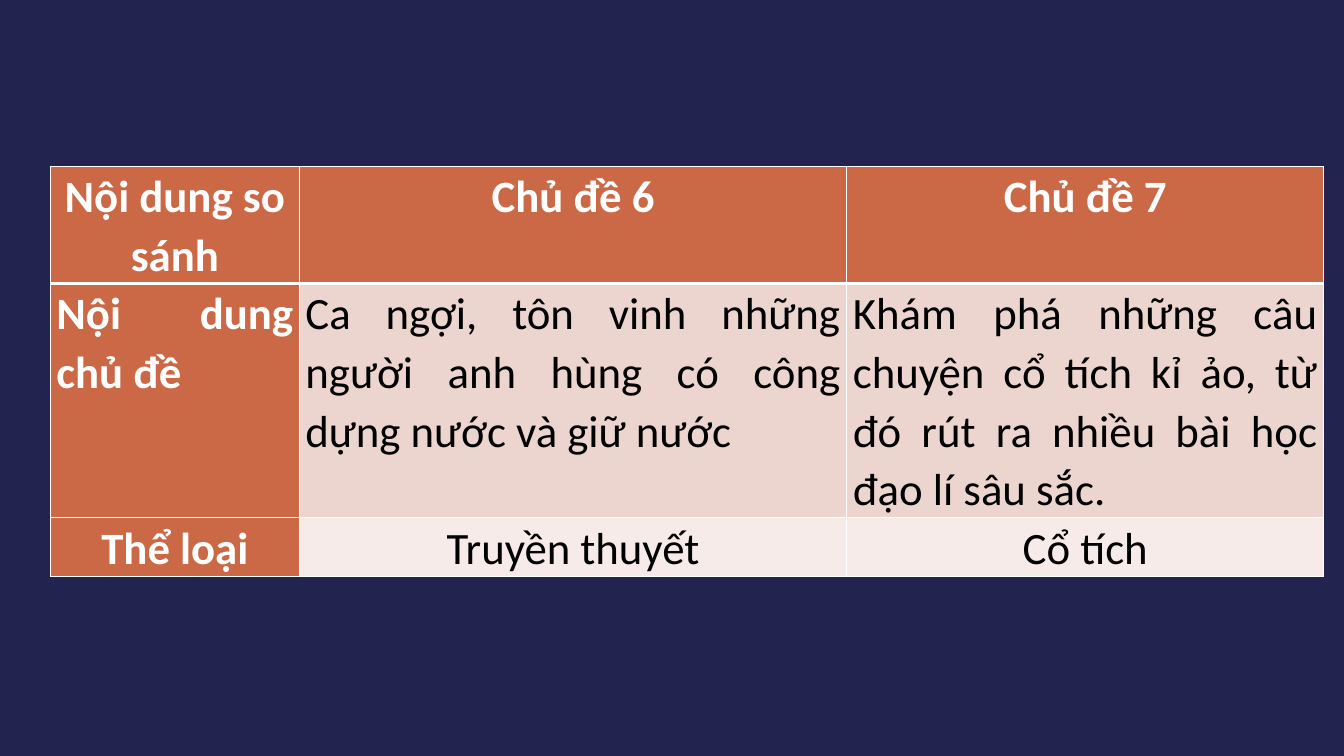
from lxml import etree
from pptx import Presentation
from pptx.dml.color import RGBColor
from pptx.enum.text import PP_ALIGN
from pptx.oxml.ns import qn
from pptx.util import Inches, Pt

CENTER, JUSTIFY = PP_ALIGN.CENTER, PP_ALIGN.JUSTIFY

ROWS = [
    ("Nội dung so sánh", "Chủ đề 6", "Chủ đề 7"),
    (
        "Nội dung chủ đề",
        "Ca ngợi, tôn vinh những người anh hùng có công dựng nước và giữ nước",
        "Khám phá những câu chuyện cổ tích kỉ ảo, từ đó rút ra nhiều bài học đạo lí sâu sắc.",
    ),
    ("Thể loại", "Truyền thuyết", "Cổ tích"),
]
ROW_ALIGNMENTS = (CENTER, JUSTIFY, CENTER)
COLUMN_WIDTHS = (2.47, 5.43, 4.73)
ROW_HEIGHTS = (1.16, 2.32, 0.58)
TABLE_LEFT, TABLE_TOP = 0.5, 1.65

THEME = {
    "background": "232350",
    "heading_fill": "CB6845",
    "body_fills": ("ECD4CF", "F6EBE9"),
    "heading_text": "FFFFFF",
    "body_text": "000000",
    "border": "FFFFFF",
    "thin": 1,
    "thick": 3,
    "font": "Calibri",
    "size": 32,
    "line_spacing": 1.07,
}
CELL_MARGINS = {
    "margin_left": Inches(0.06),
    "margin_right": Inches(0.06),
    "margin_top": 0,
    "margin_bottom": 0,
}


def set_format(target, values):
    for name, value in values.items():
        setattr(target, name, value)


def paint(fill, color):
    fill.solid()
    fill.fore_color.rgb = RGBColor.from_string(color)


def add_borders(cell, row):
    """Draw thin borders, with a thick rule under the header row."""
    widths = {side: THEME["thin"] for side in ("lnL", "lnR", "lnT", "lnB")}
    if row == 0:
        widths["lnB"] = THEME["thick"]
    elif row == 1:
        widths["lnT"] = THEME["thick"]
    properties = cell._tc.get_or_add_tcPr()
    for side, width in widths.items():
        line = etree.SubElement(properties, qn(f"a:{side}"), w=str(Pt(width)))
        solid = etree.SubElement(line, qn("a:solidFill"))
        etree.SubElement(solid, qn("a:srgbClr"), val=THEME["border"])


def fill_cell(cell, text, row, column):
    heading = row == 0 or column == 0
    set_format(cell, CELL_MARGINS)
    add_borders(cell, row)
    paint(cell.fill, THEME["heading_fill"] if heading else THEME["body_fills"][row - 1])

    para = cell.text_frame.paragraphs[0]
    set_format(para, {
        "alignment": ROW_ALIGNMENTS[row],
        "line_spacing": THEME["line_spacing"],
    })
    span = para.add_run()
    span.text = text
    set_format(span.font, {
        "name": THEME["font"],
        "size": Pt(THEME["size"]),
        "bold": heading,
    })
    color = THEME["heading_text"] if heading else THEME["body_text"]
    span.font.color.rgb = RGBColor.from_string(color)


def add_comparison_table(page):
    table = page.shapes.add_table(
        len(ROWS), len(COLUMN_WIDTHS),
        Inches(TABLE_LEFT), Inches(TABLE_TOP),
        Inches(sum(COLUMN_WIDTHS)), Inches(sum(ROW_HEIGHTS)),
    ).table
    for column, width in zip(table.columns, COLUMN_WIDTHS):
        column.width = Inches(width)
    for row, height in zip(table.rows, ROW_HEIGHTS):
        row.height = Inches(height)
    for row, texts in enumerate(ROWS):
        for column, text in enumerate(texts):
            fill_cell(table.cell(row, column), text, row, column)


def main():
    deck = Presentation()
    deck.slide_width, deck.slide_height = Inches(13.33), Inches(7.5)
    page = deck.slides.add_slide(deck.slide_layouts[6])
    paint(page.background.fill, THEME["background"])
    add_comparison_table(page)
    deck.save("out.pptx")


if __name__ == "__main__":
    main()
